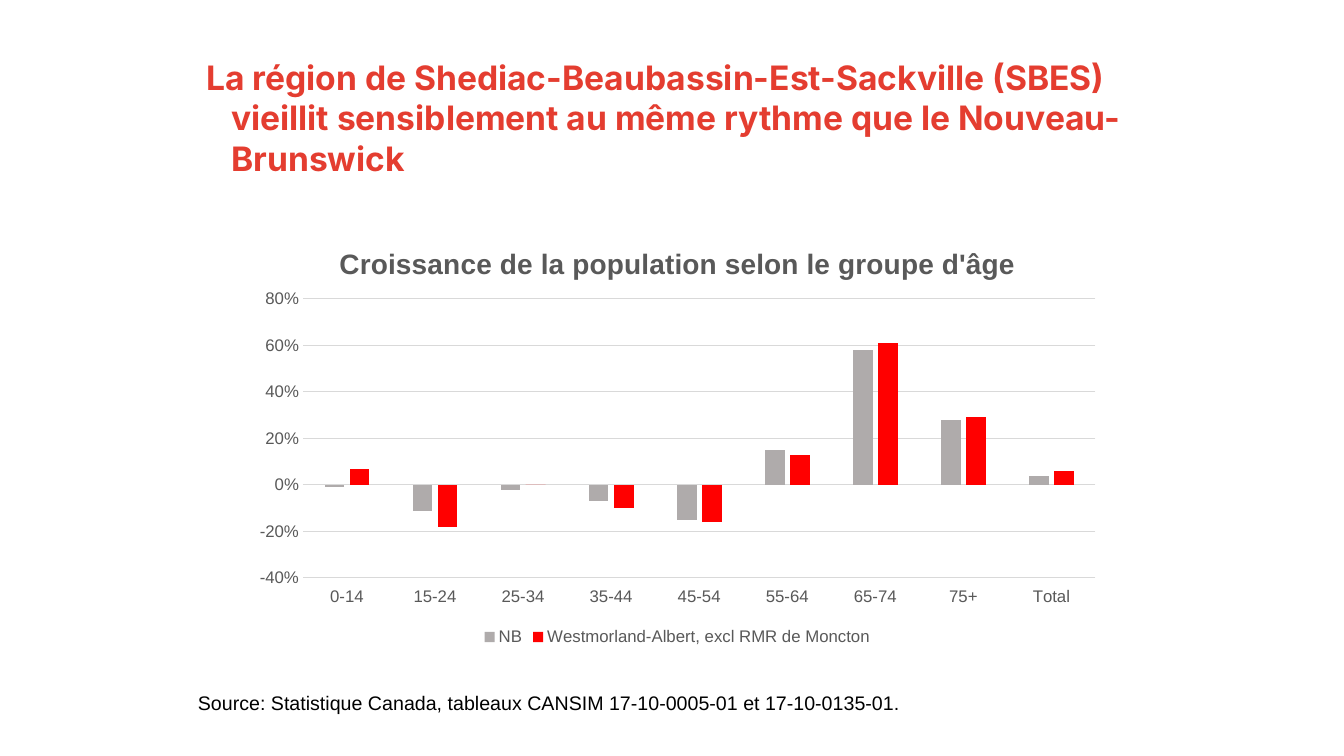
import pptx
import pptx.chart.data
import pptx.dml.color
import pptx.enum.chart
import pptx.enum.text
import pptx.oxml
import pptx.util

RED = pptx.dml.color.RGBColor(0xE4, 0x3D, 0x30)
BLACK = pptx.dml.color.RGBColor(0x00, 0x00, 0x00)
GREY_TEXT = pptx.dml.color.RGBColor(0x59, 0x59, 0x59)
GREY_LINE = pptx.dml.color.RGBColor(0xD9, 0xD9, 0xD9)
NB_GREY = pptx.dml.color.RGBColor(0xAF, 0xAB, 0xAB)
REGION_RED = pptx.dml.color.RGBColor(0xFF, 0x00, 0x00)

# Content; boxes are left, top, width, height in px
SLIDE_SIZE = (1344, 756)
HEADLINE = {
    "text": "La région de Shediac-Beaubassin-Est-Sackville (SBES) vieillit "
            "sensiblement au même rythme que le Nouveau-Brunswick",
    "box": (171, 52, 979, 156),
    "font": {"name": "Inter", "size": 24, "bold": True, "color": RED},
}
SOURCE = {
    "text": "Source: Statistique Canada, tableaux CANSIM 17-10-0005-01 et 17-10-0135-01.",
    "box": (188, 686, 943, 34),
    "font": {"name": "Arial", "size": 14, "bold": False, "color": BLACK},
}
CHART_TITLE = "Croissance de la population selon le groupe d'âge"
CHART_BOX = (242, 227, 871, 423)
PLOT_BOX = (303, 300, 793, 280)
AGE_GROUPS = ["0-14", "15-24", "25-34", "35-44", "45-54", "55-64", "65-74", "75+", "Total"]
GROWTH = [
    ("NB", NB_GREY, [-0.01, -0.11, -0.02, -0.07, -0.15, 0.15, 0.58, 0.28, 0.04]),
    ("Westmorland-Albert, excl RMR de Moncton", REGION_RED,
     [0.07, -0.18, 0, -0.1, -0.16, 0.13, 0.61, 0.29, 0.06]),
]
LABEL_FONT = {"name": "Arial", "size": 12, "bold": False, "color": GREY_TEXT}
TITLE_FONT = LABEL_FONT | {"size": 20, "bold": True}
GROWTH_SCALE = {"minimum_scale": -0.4, "maximum_scale": 0.8, "major_unit": 0.2}


def px(length):
    return pptx.util.Emu(round(length * 914400 / 100.8))


def set_font(font, style):
    for key, value in style.items():
        if key == "color":
            font.color.rgb = value
        else:
            setattr(font, key, pptx.util.Pt(value) if key == "size" else value)


def add_text(slide, content):
    frame = slide.shapes.add_textbox(*map(px, content["box"])).text_frame
    frame.word_wrap = True
    paragraph = frame.paragraphs[0]
    run = paragraph.add_run()
    run.text = content["text"]
    set_font(run.font, content["font"])
    return paragraph


def grey_line(line):
    line.color.rgb = GREY_LINE
    line.width = pptx.util.Pt(0.75)


def place_plot(chart):
    left, top, width, height = CHART_BOX
    plot_left, plot_top, plot_width, plot_height = PLOT_BOX
    shares = {"x": (plot_left - left) / width, "y": (plot_top - top) / height,
              "w": plot_width / width, "h": plot_height / height}
    modes = "".join(f'<c:{axis}Mode val="edge"/>' for axis in "xy")
    sizes = "".join(f'<c:{key} val="{share:.2f}"/>' for key, share in shares.items())
    layout = pptx.oxml.parse_xml(
        '<c:layout xmlns:c="http://schemas.openxmlformats.org/drawingml/2006/chart">'
        f'<c:manualLayout><c:layoutTarget val="inner"/>{modes}{sizes}'
        '</c:manualLayout></c:layout>')
    plot_area = chart.element.chart.plotArea
    for old_layout in plot_area.xpath("c:layout"):
        plot_area.remove(old_layout)
    plot_area.insert(0, layout)


def add_growth_chart(slide):
    data = pptx.chart.data.CategoryChartData(number_format="0%")
    data.categories = AGE_GROUPS
    for name, _, values in GROWTH:
        data.add_series(name, values)
    chart = slide.shapes.add_chart(
        pptx.enum.chart.XL_CHART_TYPE.COLUMN_CLUSTERED, *map(px, CHART_BOX), data).chart
    set_font(chart.font, LABEL_FONT)

    # Title and legend
    chart.has_title = True
    title = chart.chart_title.text_frame.paragraphs[0].add_run()
    title.text = CHART_TITLE
    set_font(title.font, TITLE_FONT)
    chart.chart_title.include_in_layout = False
    chart.has_legend = True
    chart.legend.position = pptx.enum.chart.XL_LEGEND_POSITION.BOTTOM
    chart.legend.include_in_layout = False
    set_font(chart.legend.font, LABEL_FONT)

    # Columns
    columns = chart.plots[0]
    for key, value in {"gap_width": 219, "overlap": -27, "vary_by_categories": False}.items():
        setattr(columns, key, value)
    for series, (_, color, _) in zip(columns.series, GROWTH):
        series.invert_if_negative = False
        series.format.fill.solid()
        series.format.fill.fore_color.rgb = color

    # Axes
    ages, growth = chart.category_axis, chart.value_axis
    for axis in (ages, growth):
        axis.major_tick_mark = axis.minor_tick_mark = pptx.enum.chart.XL_TICK_MARK.NONE
        set_font(axis.tick_labels.font, LABEL_FONT)
    ages.tick_label_position = pptx.enum.chart.XL_TICK_LABEL_POSITION.LOW
    grey_line(ages.format.line)
    for key, value in GROWTH_SCALE.items():
        setattr(growth, key, value)
    growth.tick_labels.number_format = "0%"
    growth.tick_labels.number_format_is_linked = False
    growth.format.line.fill.background()
    growth.has_major_gridlines = True
    grey_line(growth.major_gridlines.format.line)
    place_plot(chart)


def main():
    deck = pptx.Presentation()
    deck.slide_width, deck.slide_height = map(px, SLIDE_SIZE)
    slide = deck.slides.add_slide(deck.slide_layouts[6])

    # Headline with a hanging indent
    headline = add_text(slide, HEADLINE)
    indents = headline._p.get_or_add_pPr()
    indents.set("marL", str(pptx.util.Inches(0.5)))
    indents.set("indent", str(pptx.util.Inches(-0.25)))

    add_growth_chart(slide)
    add_text(slide, SOURCE)
    deck.save("out.pptx")


if __name__ == "__main__":
    main()
